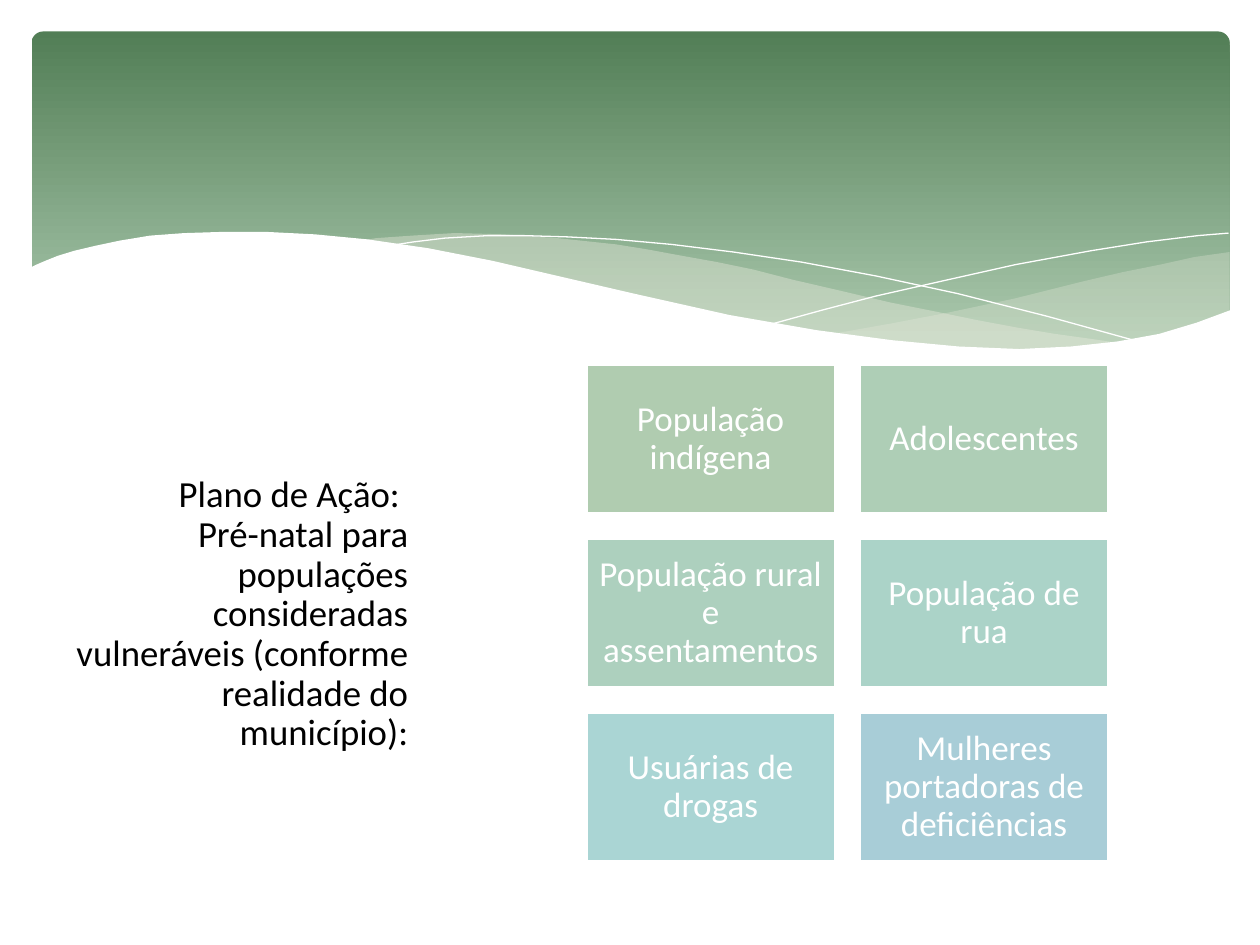
from lxml import etree
from pptx import Presentation
from pptx.dml.color import RGBColor
from pptx.enum.shapes import MSO_SHAPE as Shape
from pptx.enum.text import MSO_ANCHOR as Anchor, MSO_AUTO_SIZE as AutoSize, PP_ALIGN as Align
from pptx.oxml.ns import qn
from pptx.util import Inches, Pt

FONT = "Calibri"
WHITE = RGBColor(0xFF, 0xFF, 0xFF)
BLACK = RGBColor(0x00, 0x00, 0x00)
DARK_GREEN = RGBColor(0x52, 0x7E, 0x56)
LIGHT_GREEN = RGBColor(0xAA, 0xC8, 0xAD)
VEIL = RGBColor(0xEA, 0xEB, 0xDE)

# Wave points are inches from the banner's top left corner
RIGHT_VEIL = [
    (9.51, 1.75), (9.23, 1.79), (8.96, 1.85), (8.66, 1.91), (8.36, 1.98), (7.8, 2.12),
    (7.28, 2.23), (6.81, 2.32), (6.36, 2.4), (6.66, 2.44), (6.94, 2.47), (7.2, 2.5),
    (7.56, 2.52), (7.89, 2.53), (8.19, 2.52), (8.47, 2.49), (8.72, 2.45), (8.96, 2.4),
    (9.24, 2.32), (9.51, 2.22)]
LEFT_VEIL = [
    (8.68, 2.48), (8.41, 2.44), (8.12, 2.4), (7.82, 2.35), (7.5, 2.29), (7.16, 2.22),
    (6.81, 2.15), (6.43, 2.06), (6.04, 1.97), (5.73, 1.89), (5.44, 1.83), (5.16, 1.78),
    (4.89, 1.73), (4.64, 1.69), (4.17, 1.64), (3.74, 1.61), (3.36, 1.6), (3.03, 1.62),
    (2.74, 1.64), (2.61, 1.66), (2.98, 1.71), (3.37, 1.78), (3.79, 1.86), (4.24, 1.97),
    (4.66, 2.07), (5.05, 2.15), (5.41, 2.23), (5.76, 2.3), (6.09, 2.36), (6.4, 2.41),
    (6.7, 2.45), (6.97, 2.49), (7.23, 2.51), (7.48, 2.52), (7.71, 2.53), (8.13, 2.53),
    (8.32, 2.52), (8.51, 2.5)]
FALLING_LINE = [
    (2.84, 1.7), (3.03, 1.67), (3.28, 1.64), (3.62, 1.62), (3.91, 1.62), (4.25, 1.63),
    (4.64, 1.65), (5.08, 1.69), (5.57, 1.75), (6.11, 1.83), (6.7, 1.94), (7.35, 2.08),
    (8.06, 2.26), (8.82, 2.47)]
RISING_LINE = [
    (5.88, 2.32), (6.28, 2.21), (6.7, 2.1), (7.23, 1.98), (7.81, 1.85), (8.41, 1.74),
    (8.85, 1.67), (9.26, 1.62), (9.5, 1.6)]
WHITE_WAVE = [
    (9.52, 2.21), (9.25, 2.31), (8.95, 2.4), (8.62, 2.46), (8.25, 2.5), (7.84, 2.52),
    (7.36, 2.5), (6.83, 2.45), (6.23, 2.37), (5.54, 2.25), (4.78, 2.08), (4.22, 1.95),
    (3.66, 1.82), (3.15, 1.72), (2.67, 1.65), (2.25, 1.61), (1.86, 1.59), (1.52, 1.59),
    (1.21, 1.6), (0.94, 1.62), (0.7, 1.66), (0.51, 1.7), (0.34, 1.74), (0.21, 1.78),
    (0.11, 1.82), (0.04, 1.85), (-0.02, 1.88), (-0.02, 3.04), (9.52, 3.04)]

TITLE = ("Plano de Ação: \vPré-natal para populações consideradas "
         "vulneráveis (conforme realidade do município):")
GROUPS = [
    ("População indígena", RGBColor(0xB0, 0xCC, 0xB0)),
    ("Adolescentes", RGBColor(0xAE, 0xCE, 0xB6)),
    ("População rural e assentamentos", RGBColor(0xAD, 0xD0, 0xBE)),
    ("População de rua", RGBColor(0xAB, 0xD3, 0xC8)),
    ("Usuárias de drogas", RGBColor(0xAA, 0xD5, 0xD4)),
    ("Mulheres portadoras de deficiências", RGBColor(0xA8, 0xCD, 0xD7)),
]


def add_wave(slide, left, top, points, closed):
    places = [(left + Inches(x), top + Inches(y)) for x, y in points]
    builder = slide.shapes.build_freeform(*places[0])
    builder.add_line_segments(places[1:], close=closed)
    shape = builder.convert_to_shape()
    shape.shadow.inherit = False
    return shape


def add_filled_wave(slide, left, top, points, color, opacity=100):
    shape = add_wave(slide, left, top, points, True)
    shape.fill.solid()
    shape.fill.fore_color.rgb = color
    shape.line.fill.background()
    if opacity < 100:
        srgb = shape.fill._xPr.find(".//" + qn("a:srgbClr"))
        etree.SubElement(srgb, qn("a:alpha"), val=str(opacity * 1000))


def add_banner(slide, left, top, width, height):
    # Gradient panel
    panel = slide.shapes.add_shape(Shape.ROUNDED_RECTANGLE, left, top, width, height)
    panel.adjustments[0] = 0.034
    panel.shadow.inherit = False
    panel.line.fill.background()
    panel.fill.gradient()
    panel.fill.gradient_angle = 270
    stops = [(0, DARK_GREEN), (0.9, LIGHT_GREEN)]
    for stop, (position, color) in zip(panel.fill.gradient_stops, stops):
        stop.position = position
        stop.color.rgb = color

    # Veils, hairlines and the white wave that cuts the lower edge
    add_filled_wave(slide, left, top, RIGHT_VEIL, VEIL, 29)
    add_filled_wave(slide, left, top, LEFT_VEIL, VEIL, 40)
    for points in (FALLING_LINE, RISING_LINE):
        hairline = add_wave(slide, left, top, points, False)
        hairline.fill.background()
        hairline.line.color.rgb = WHITE
        hairline.line.width = Pt(0)
    add_filled_wave(slide, left, top, WHITE_WAVE, WHITE)


def set_text(text_frame, text, size, color, alignment):
    text_frame.text = text
    text_frame.word_wrap = True
    text_frame.auto_size = AutoSize.NONE
    text_frame.vertical_anchor = Anchor.MIDDLE
    paragraph = text_frame.paragraphs[0]
    paragraph.alignment = alignment
    paragraph.line_spacing = 0.9
    for run in paragraph.runs:
        run.font.name = FONT
        run.font.size = Pt(size)
        run.font.color.rgb = color


def place_title(slide, left, top, width, height):
    title = slide.shapes.title
    title.left, title.top, title.width, title.height = left, top, width, height
    set_text(title.text_frame, TITLE, 21, BLACK, Align.RIGHT)
    title.text_frame.margin_bottom = Inches(0.37)


def add_group_tiles(slide, left, top, width, height):
    columns, rows, gap = 2, 3, Inches(0.19)
    tile_width = (width - gap * (columns - 1)) // columns
    tile_height = (height - gap * (rows - 1)) // rows
    for index, (name, color) in enumerate(GROUPS):
        row, column = divmod(index, columns)
        tile = slide.shapes.add_shape(
            Shape.RECTANGLE, left + column * (tile_width + gap),
            top + row * (tile_height + gap), tile_width, tile_height)
        tile.shadow.inherit = False
        tile.fill.solid()
        tile.fill.fore_color.rgb = color
        tile.line.color.rgb = WHITE
        tile.line.width = Pt(2)
        text_frame = tile.text_frame
        set_text(text_frame, name, 20, WHITE, Align.CENTER)
        text_frame.margin_left = text_frame.margin_right = Inches(0.08)
        text_frame.margin_top = text_frame.margin_bottom = Inches(0.08)


def main():
    presentation = Presentation()
    presentation.slide_width, presentation.slide_height = Inches(10), Inches(7.5)
    slide = presentation.slides.add_slide(presentation.slide_layouts[5])
    add_banner(slide, Inches(0.25), Inches(0.25), Inches(9.51), Inches(2.7))
    place_title(slide, Inches(0.43), Inches(3.36), Inches(2.91), Inches(3.36))
    add_group_tiles(slide, Inches(4.65), Inches(2.89), Inches(4.15), Inches(3.95))
    presentation.save("out.pptx")


if __name__ == "__main__":
    main()
